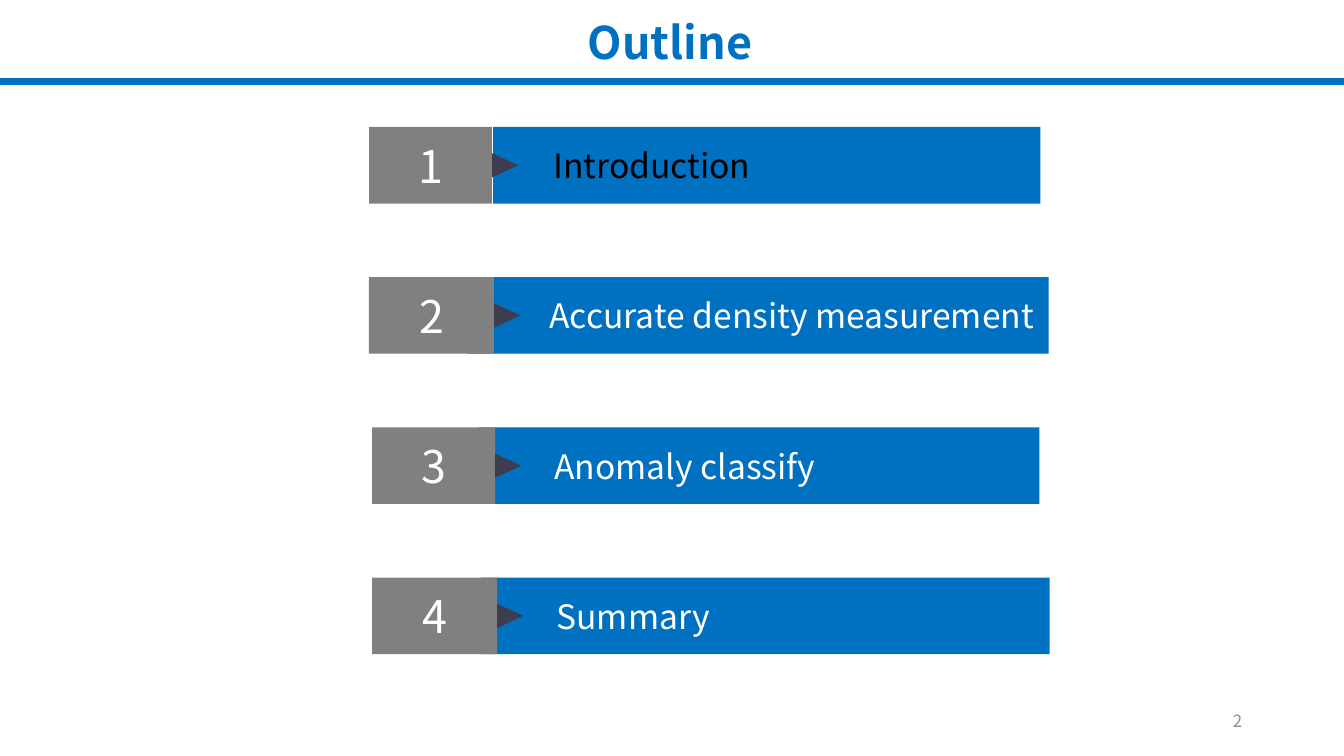
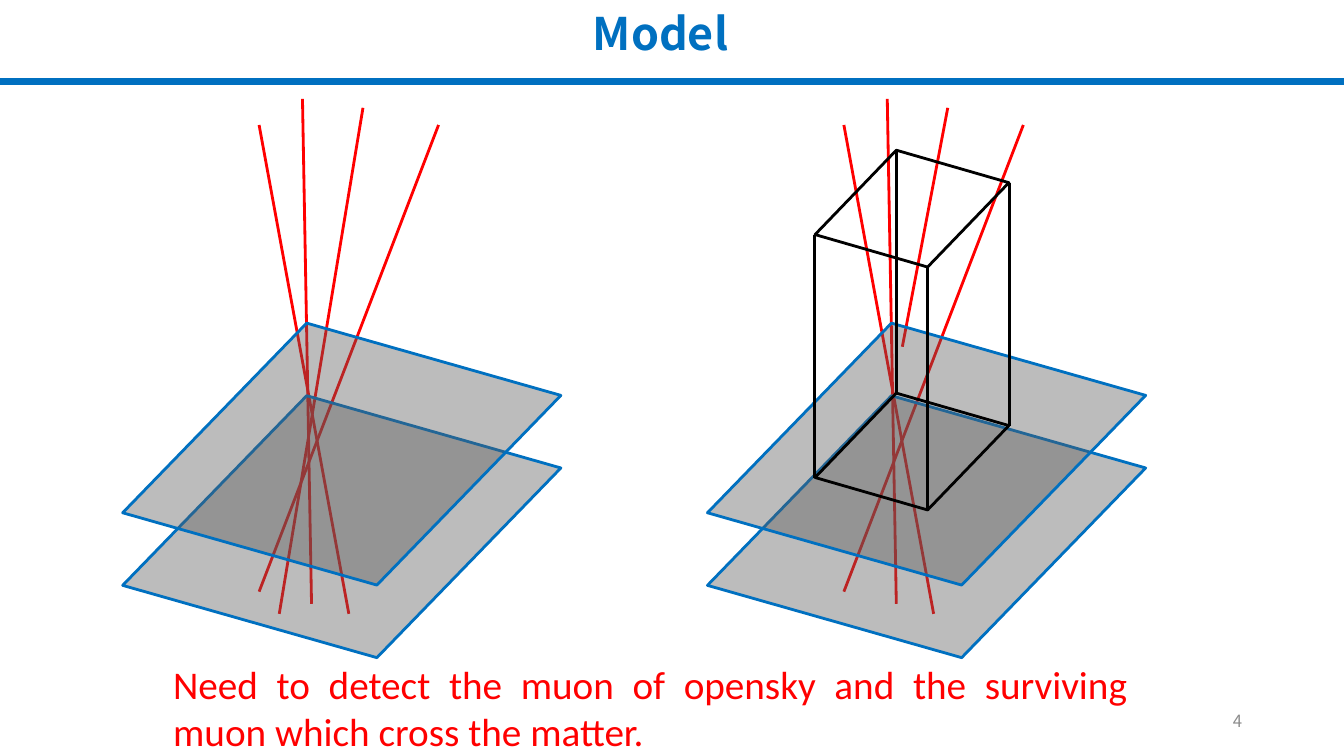
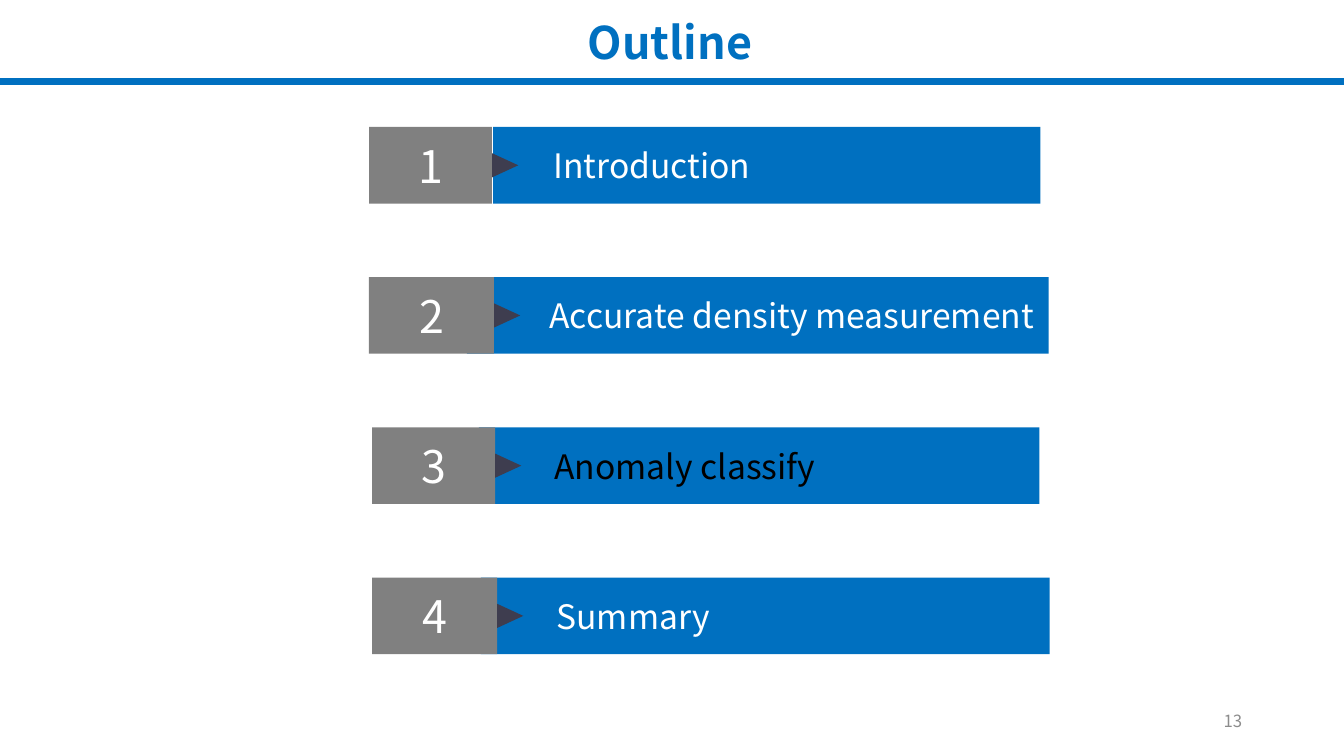
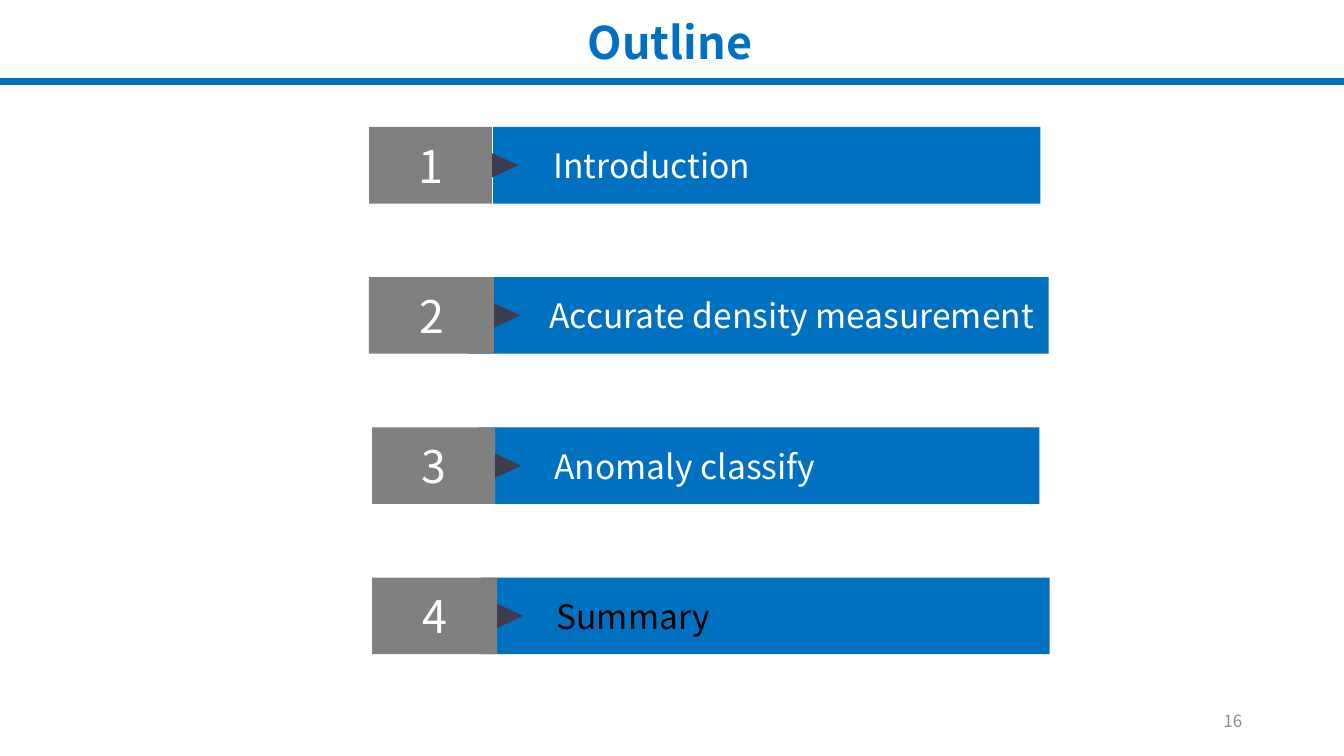
"""Build a muon imaging deck: three outline slides and one model slide."""
from lxml import etree
from pptx import Presentation
from pptx.dml.color import RGBColor
from pptx.enum.shapes import MSO_CONNECTOR, MSO_SHAPE
from pptx.enum.text import MSO_ANCHOR, MSO_AUTO_SIZE, PP_ALIGN
from pptx.oxml.ns import qn
from pptx.util import Inches, Pt

RECT, WEDGE, RHOMB = MSO_SHAPE.RECTANGLE, MSO_SHAPE.ISOSCELES_TRIANGLE, MSO_SHAPE.DIAMOND
STRAIGHT = MSO_CONNECTOR.STRAIGHT
TOP, MIDDLE = MSO_ANCHOR.TOP, MSO_ANCHOR.MIDDLE
LEFT, CENTER, RIGHT, JUSTIFY = PP_ALIGN.LEFT, PP_ALIGN.CENTER, PP_ALIGN.RIGHT, PP_ALIGN.JUSTIFY

BLUE = RGBColor(0x00, 0x70, 0xC0)
GRAY = RGBColor(0x80, 0x80, 0x80)
SLATE = RGBColor(0x3E, 0x3D, 0x4F)
SMOKE = RGBColor(0x59, 0x59, 0x59)
PALE = RGBColor(0x8C, 0x8C, 0x8C)
RED = RGBColor(0xFF, 0x00, 0x00)
BLACK = RGBColor(0x00, 0x00, 0x00)
WHITE = RGBColor(0xFF, 0xFF, 0xFF)
SANS, BODY = "Noto Sans CJK SC", "Calibri"

STYLES = {
    "title": dict(name=SANS, size=Pt(32), bold=True),
    "digit": dict(name=SANS, size=Pt(32)),
    "topic": dict(name=SANS, size=Pt(24)),
    "page": dict(name=SANS, size=Pt(12)),
    "note": dict(name=BODY, size=Pt(28)),
}

# label, bar left, bar right, text left, number left, number right
TOPICS = [
    ("Introduction", 4.89, 10.32, 5.49, 3.66, 4.88),
    ("Accurate density measurement", 4.63, 10.4, 5.45, 3.66, 4.9),
    ("Anomaly classify", 4.75, 10.31, 5.5, 3.69, 4.91),
    ("Summary", 4.77, 10.41, 5.52, 3.69, 4.93),
]
ROW_TOP, ROW_STEP, ROW_H = 1.26, 1.49, 0.76

RAYS = [
    (2.57, 1.24, 3.46, 6.09),
    (4.35, 1.24, 2.57, 5.87),
    (3, 0.98, 3.09, 5.99),
]
FREE_RAY = (3.6, 1.07, 2.77, 6.09)
CUT_RAY = (3.6, 1.07, 3.15, 3.44)
SCENES = [(5.8, CUT_RAY), (0, FREE_RAY)]
PLANES = [3.88, 3.16]
BOX_TOP, BOX_DROP = 1.47, 2.41
CORNERS = [(8.08, 2.33), (9.2, 2.66), (10.01, 1.82), (8.89, 1.5)]
NOTE = "Need to detect the muon of opensky and the surviving muon which cross the matter."

DECK = [("outline", 2, 0), ("model", 4, None), ("outline", 13, 2), ("outline", 16, 3)]


def write(shape, text, style, color, align=LEFT, anchor=MIDDLE):
    """Fill a shape with one styled paragraph."""
    frame = shape.text_frame
    frame.auto_size = MSO_AUTO_SIZE.NONE
    frame.word_wrap = True
    frame.vertical_anchor = anchor
    para = frame.paragraphs[0]
    para.alignment = align
    run = para.add_run()
    run.text = text
    for key, value in STYLES[style].items():
        setattr(run.font, key, value)
    run.font.color.rgb = color
    return frame


def place(slide, kind, at, fill=None, line=None, turn=0, alpha=None):
    """Add a flat preset shape."""
    shape = slide.shapes.add_shape(kind, *map(Inches, at))
    shape.shadow.inherit = False
    shape.rotation = turn
    if fill is None:
        shape.fill.background()
    else:
        shape.fill.solid()
        shape.fill.fore_color.rgb = fill
    if alpha:
        tint = shape.fill._xPr.find(".//" + qn("a:srgbClr"))
        etree.SubElement(tint, qn("a:alpha"), val=str(alpha * 1000))
    if line is None:
        shape.line.fill.background()
    else:
        shape.line.color.rgb = line
        shape.line.width = Pt(2)
    return shape


def stroke(slide, ends, color, width=2):
    """Add a straight line without a shadow."""
    line = slide.shapes.add_connector(STRAIGHT, *map(Inches, ends))
    line.line.color.rgb = color
    line.line.width = Pt(width)
    etree.SubElement(line._element.spPr, qn("a:effectLst"))


def label(slide, at, *args):
    """Add a text box."""
    write(slide.shapes.add_textbox(*map(Inches, at)), *args)


def start(deck, title, left, top, page):
    """Add a slide with its title, rule and page number."""
    slide = deck.slides.add_slide(deck.slide_layouts[5])
    head = slide.shapes.title
    head.left, head.top, head.width, head.height = map(Inches, (left, top, 1.87, 0.64))
    write(head, title, "title", BLUE)
    stroke(slide, (0, 0.81, 13.33, 0.81), BLUE, 5)
    label(slide, (9.42, 6.95, 3, 0.4), str(page), "page", PALE, RIGHT)
    return slide


def outline(deck, page, active):
    """List the topics, with the active one in black."""
    slide = start(deck, "Outline", 5.73, 0.09, page)
    for row, (text, left, right, text_x, num_x, edge) in enumerate(TOPICS):
        top = ROW_TOP + row * ROW_STEP
        bar = place(slide, RECT, (left, top, right - left, ROW_H), BLUE)
        frame = write(bar, text, "topic", BLACK if row == active else WHITE)
        frame.margin_left, frame.margin_right = Inches(text_x - left), 0
        tile = place(slide, RECT, (num_x, top, edge - num_x, ROW_H), GRAY)
        write(tile, str(row + 1), "digit", WHITE, CENTER)
        place(slide, WEDGE, (edge + 0.01, top + 0.25, 0.24, 0.26), SLATE, turn=90)


def model(deck, page, active):
    """Draw muon rays through two planes, with and without a block."""
    slide = start(deck, "Model", 5.78, 0, page)
    for shift, extra in SCENES:
        for x1, y1, x2, y2 in RAYS + [extra]:
            stroke(slide, (x1 + shift, y1, x2 + shift, y2), RED)
        for top in PLANES:
            place(slide, RHOMB, (1.14 + shift, top, 4.5, 2.69), SMOKE, BLUE, 345, 40)
    for top in (BOX_TOP, BOX_TOP + BOX_DROP):
        place(slide, RHOMB, (8.05, top, 1.99, 1.2), line=BLACK, turn=345)
    for x, y in CORNERS:
        stroke(slide, (x, y, x, y + BOX_DROP), BLACK)
    label(slide, (1.62, 6.5, 9.66, 1.04), NOTE, "note", RED, JUSTIFY, TOP)


def main():
    """Build and save the deck."""
    deck = Presentation()
    deck.slide_width, deck.slide_height = Inches(13.33), Inches(7.5)
    makers = {"outline": outline, "model": model}
    for kind, page, active in DECK:
        makers[kind](deck, page, active)
    deck.save("out.pptx")


if __name__ == "__main__":
    main()
